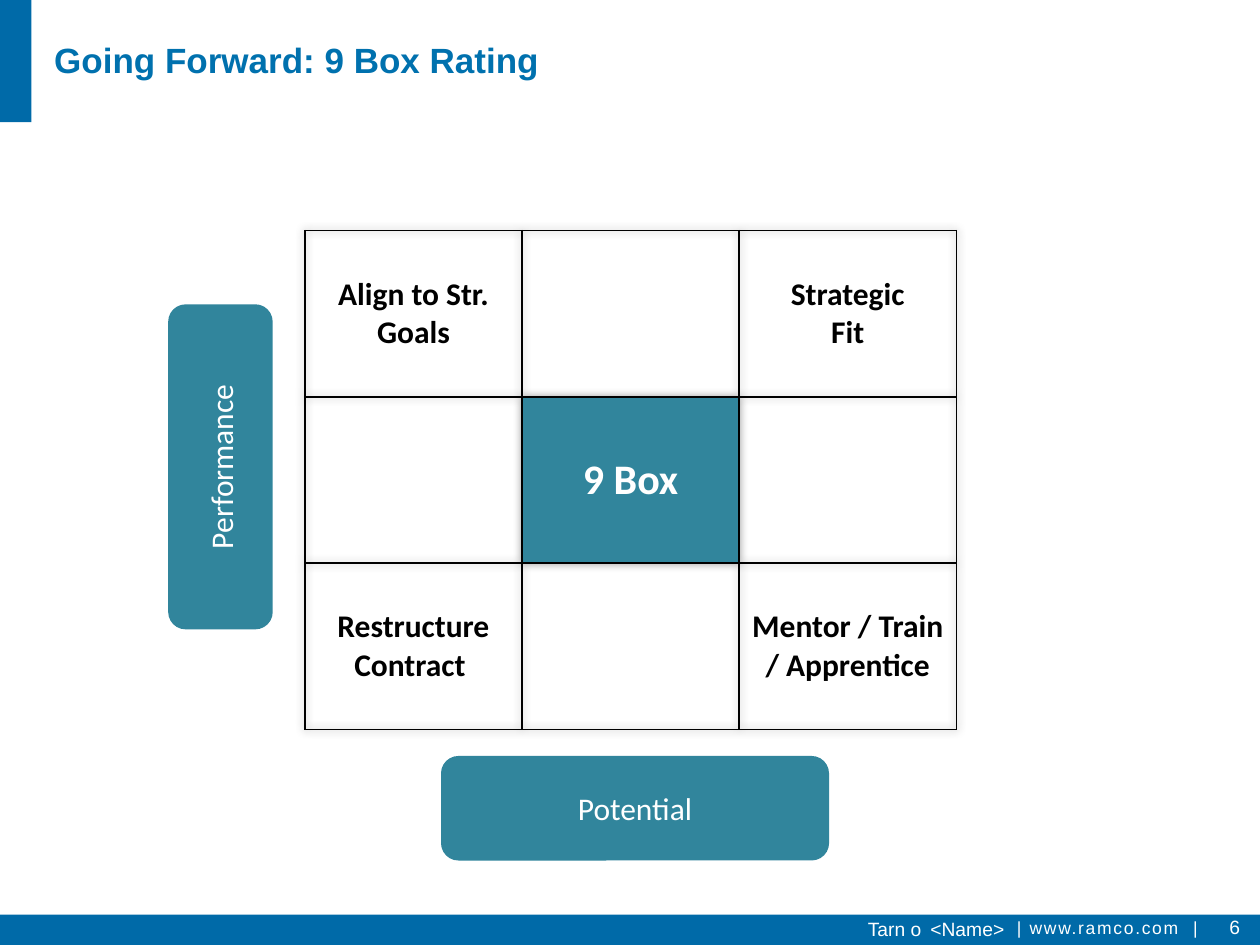
import pptx
import pptx.dml.color
import pptx.enum.shapes
import pptx.enum.text
import pptx.oxml
import pptx.oxml.ns
import pptx.util

Inches = pptx.util.Inches
Align = pptx.enum.text.PP_ALIGN
Anchor = pptx.enum.text.MSO_ANCHOR
Shape = pptx.enum.shapes.MSO_SHAPE

COLORS = {
    "bar": "006AA8",
    "title": "0071AE",
    "teal": "31859C",
    "white": "FFFFFF",
    "black": "000000",
}
NAMESPACE = pptx.oxml.ns.nsdecls("a")


def rgb(name):
    return pptx.dml.color.RGBColor.from_string(COLORS[name])


class SlideBuilder:
    heading_font = "Arial"
    body_font = "Calibri"

    def __init__(self, presentation):
        self.slide = presentation.slides.add_slide(presentation.slide_layouts[5])

    def format_run(self, run, size, color, font, bold=False, spacing=0):
        run.font.size = pptx.util.Pt(size)
        run.font.name = font
        run.font.bold = bold
        run.font.color.rgb = rgb(color)
        if spacing:
            run.font._element.set("spc", str(spacing * 100))

    def format_text(self, text_frame, size, color, font, align, bold=False):
        for paragraph in text_frame.paragraphs:
            paragraph.alignment = align
            for run in paragraph.runs:
                self.format_run(run, size, color, font, bold)

    def title(self, text, left, top, width, height):
        shape = self.slide.shapes.title
        shape.left, shape.top = Inches(left), Inches(top)
        shape.width, shape.height = Inches(width), Inches(height)
        shape.text_frame.text = text
        shape.text_frame.vertical_anchor = Anchor.MIDDLE
        self.format_text(shape.text_frame, 20, "title", self.heading_font, Align.LEFT, True)

    def box(self, kind, color, left, top, width, height, text="", rotation=0):
        shape = self.slide.shapes.add_shape(
            kind, Inches(left), Inches(top), Inches(width), Inches(height))
        shape.shadow.inherit = False
        shape.fill.solid()
        shape.fill.fore_color.rgb = rgb(color)
        shape.line.fill.background()
        shape.rotation = rotation
        if text:
            shape.text_frame.text = text
            shape.text_frame.vertical_anchor = Anchor.MIDDLE
            self.format_text(shape.text_frame, 18, "white", self.body_font, Align.CENTER)

    def footer_text(self, runs, size, left, top, width, height, align, anchor=Anchor.TOP):
        """Add one line made of (text, letter spacing in points) runs."""
        shape = self.slide.shapes.add_textbox(
            Inches(left), Inches(top), Inches(width), Inches(height))
        shape.text_frame.word_wrap = True
        shape.text_frame.vertical_anchor = anchor
        paragraph = shape.text_frame.paragraphs[0]
        paragraph.alignment = align
        for text, spacing in runs:
            run = paragraph.add_run()
            run.text = text
            self.format_run(run, size, "white", self.heading_font, spacing=spacing)

    def cell_borders(self, cell):
        properties = cell._tc.get_or_add_tcPr()
        for side in ("lnL", "lnR", "lnT", "lnB"):
            properties.append(pptx.oxml.parse_xml(
                f'<a:{side} {NAMESPACE} w="12700"><a:solidFill>'
                f'<a:srgbClr val="{COLORS["black"]}"/></a:solidFill></a:{side}>'))

    def rating_grid(self, rows, left, top, width, height):
        frame = self.slide.shapes.add_table(
            len(rows), len(rows[0]), Inches(left), Inches(top), Inches(width), Inches(height))
        table = frame.table
        table.first_row = False
        table.horz_banding = False
        table._tbl.tblPr.insert(0, pptx.oxml.parse_xml(
            f'<a:effectLst {NAMESPACE}><a:outerShdw blurRad="63500" algn="ctr" rotWithShape="0">'
            f'<a:srgbClr val="{COLORS["black"]}"><a:alpha val="40000"/></a:srgbClr>'
            '</a:outerShdw></a:effectLst>'))
        center = (len(rows) // 2, len(rows[0]) // 2)
        for row, texts in enumerate(rows):
            for column, text in enumerate(texts):
                cell = table.cell(row, column)
                self.cell_borders(cell)
                cell.vertical_anchor = Anchor.MIDDLE
                cell.text_frame.text = text
                size, color = 18, "black"
                if (row, column) == center:
                    size, color = 24, "white"
                    cell.fill.solid()
                    cell.fill.fore_color.rgb = rgb("teal")
                else:
                    cell.fill.background()
                self.format_text(cell.text_frame, size, color, self.body_font, Align.CENTER, True)


def main():
    presentation = pptx.Presentation()
    presentation.slide_width = Inches(10)
    presentation.slide_height = Inches(7.5)
    builder = SlideBuilder(presentation)

    # Header accent and footer bar
    builder.box(Shape.RECTANGLE, "bar", 0, 0, 0.25, 0.97)
    builder.box(Shape.RECTANGLE, "bar", 0, 7.26, 10, 0.25)
    builder.footer_text([(" | www.ramco.com  |", 1)], 10, 7.92, 7.23, 2.06, 0.29, Align.LEFT)
    builder.footer_text([("Tarn ", 0), ("o ", 1), ("<Name>", 0)], 11,
                        5.74, 7.23, 2.33, 0.29, Align.RIGHT)
    builder.footer_text([("6", 0)], 11, 9.52, 7.16, 0.42, 0.4, Align.RIGHT, Anchor.MIDDLE)

    # Title
    builder.title("Going Forward: 9 Box Rating", 0.33, 0, 8.08, 0.95)

    # Nine-box grid
    builder.rating_grid([
        ["Align to Str. Goals", "", "Strategic\vFit"],
        ["", "9 Box", ""],
        ["Restructure Contract ", "", "Mentor / Train / Apprentice"],
    ], 2.42, 1.83, 5.17, 3.96)

    # Axis labels
    builder.box(Shape.ROUNDED_RECTANGLE, "teal", 3.5, 6, 3.08, 0.83, "Potential")
    builder.box(Shape.ROUNDED_RECTANGLE, "teal", 0.46, 3.29, 2.58, 0.83, "Performance", 270)

    presentation.save("out.pptx")


if __name__ == "__main__":
    main()
